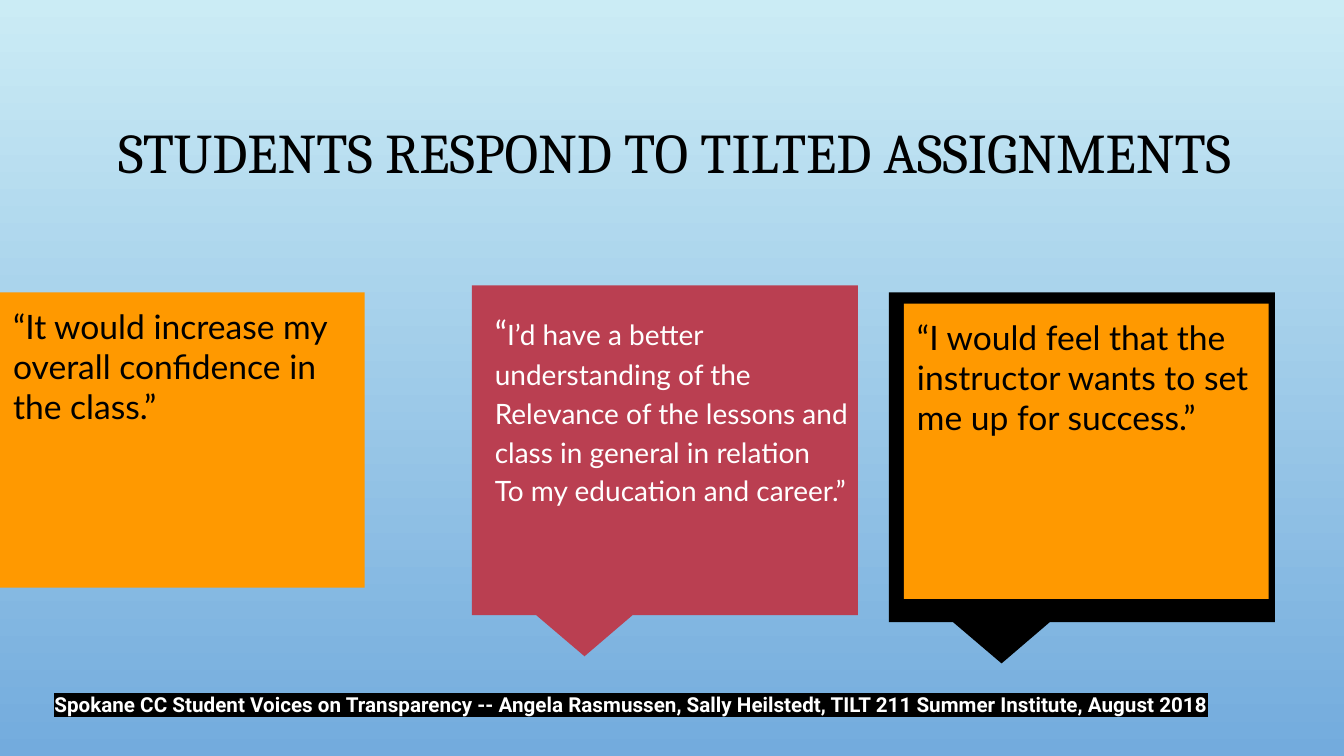
from dataclasses import dataclass
from typing import Optional

from lxml.etree import SubElement
from pptx import Presentation
from pptx.dml.color import RGBColor as Rgb
from pptx.enum.shapes import MSO_SHAPE as Preset
from pptx.enum.text import MSO_ANCHOR as Anchor, PP_ALIGN as Align
from pptx.oxml.ns import qn
from pptx.util import Cm, Pt


@dataclass(frozen=True)
class Theme:
    sky_top: str = "CBECF5"
    sky_bottom: str = "73ABDD"
    black: str = "000000"
    white: str = "FFFFFF"
    orange: str = "FF9900"
    crimson: str = "BA3F51"
    title_font: str = "Cambria"
    quote_font: str = "Lato"
    credit_font: str = "Roboto"
    title_size: float = 40
    quote_size: float = 24
    detail_size: float = 20
    credit_size: float = 14.7
    inset: float = 0.33


@dataclass(frozen=True)
class Callout:
    left: float
    top: float
    fill: str


@dataclass(frozen=True)
class Quote:
    left: float
    top: float
    spans: tuple[tuple[str, float], ...]
    color: str
    fill: Optional[str] = None
    width: float = 9.19
    line_spacing: Optional[float] = None


THEME = Theme()
CALLOUT_WIDTH, CALLOUT_HEIGHT = 9.73, 8.31
QUOTE_HEIGHT = 7.44

CALLOUTS = (
    Callout(22.4, 7.37, THEME.black),
    Callout(11.89, 7.19, THEME.crimson),
)
QUOTES = (
    Quote(22.78, 7.65, (("“I would feel that the instructor wants to set me up for success.”",
                         THEME.quote_size),), THEME.black, THEME.orange),
    Quote(0, 7.37, (("“It would increase my overall confidence in the class.”",
                     THEME.quote_size),), THEME.black, THEME.orange),
    Quote(12.14, 7.39, (("“", THEME.quote_size),
                        ("I’d have a better understanding of the\v"
                         "Relevance of the lessons and class in general in relation\v"
                         "To my education and career.”", THEME.detail_size)),
          THEME.white, width=9.75, line_spacing=1.15),
)


def paint_background(page) -> None:
    fill = page.background.fill
    fill.gradient()
    fill.gradient_angle = 270
    for stop, color in zip(fill.gradient_stops, (THEME.sky_top, THEME.sky_bottom)):
        stop.color.rgb = Rgb.from_string(color)


def add_callout(page, callout: Callout) -> None:
    shape = page.shapes.add_shape(
        Preset.RECTANGULAR_CALLOUT, Cm(callout.left), Cm(callout.top),
        Cm(CALLOUT_WIDTH), Cm(CALLOUT_HEIGHT))
    shape.shadow.inherit = False
    shape.adjustments[0] = -0.208
    shape.adjustments[1] = 0.625
    shape.fill.solid()
    shape.fill.fore_color.rgb = Rgb.from_string(callout.fill)
    shape.line.fill.background()


def add_text(page, left: float, top: float, width: float, height: float,
             spans: tuple[tuple[str, float], ...], *, font: str, color: str,
             fill: Optional[str] = None, bold: bool = False,
             highlight: Optional[str] = None, align: Align = Align.LEFT,
             anchor: Anchor = Anchor.TOP,
             line_spacing: Optional[float] = None) -> None:
    box = page.shapes.add_textbox(Cm(left), Cm(top), Cm(width), Cm(height))
    if fill:
        box.fill.solid()
        box.fill.fore_color.rgb = Rgb.from_string(fill)
    frame = box.text_frame
    frame.word_wrap = True
    frame.vertical_anchor = anchor
    frame.margin_left = frame.margin_right = Cm(THEME.inset)
    frame.margin_top = frame.margin_bottom = Cm(THEME.inset)
    para = frame.paragraphs[0]
    para.alignment = align
    para.line_spacing = line_spacing
    for index, (text, size) in enumerate(spans):
        for position, line in enumerate(text.split("\v")):
            if position:
                para.add_line_break()
            span = para.add_run()
            span.text = line
            span.font.size = Pt(size)
            span.font.bold = bold
            span.font.color.rgb = Rgb.from_string(color)
            if highlight:
                mark = SubElement(span.font._element, qn("a:highlight"))
                SubElement(mark, qn("a:srgbClr"), val=highlight)
            span.font.name = font


def main() -> None:
    deck = Presentation()
    deck.slide_width, deck.slide_height = Cm(33.87), Cm(19.05)
    page = deck.slides.add_slide(deck.slide_layouts[6])
    paint_background(page)
    for callout in CALLOUTS:
        add_callout(page, callout)
    add_text(page, 1.04, 2.64, 31.93, 3.78,
             (("STUDENTS RESPOND TO TILTED ASSIGNMENTS", THEME.title_size),),
             font=THEME.title_font, color=THEME.black, align=Align.CENTER)
    for quote in QUOTES:
        add_text(page, quote.left, quote.top, quote.width, QUOTE_HEIGHT, quote.spans,
                 font=THEME.quote_font, color=quote.color, fill=quote.fill,
                 line_spacing=quote.line_spacing)
    add_text(page, 1.04, 17.25, 30.4, 0.97,
             (("Spokane CC Student Voices on Transparency -- Angela Rasmussen, "
               "Sally Heilstedt, TILT 211 Summer Institute, August 2018",
               THEME.credit_size),),
             font=THEME.credit_font, color=THEME.white, bold=True,
             highlight=THEME.black, anchor=Anchor.MIDDLE)
    deck.save("out.pptx")


if __name__ == "__main__":
    main()
